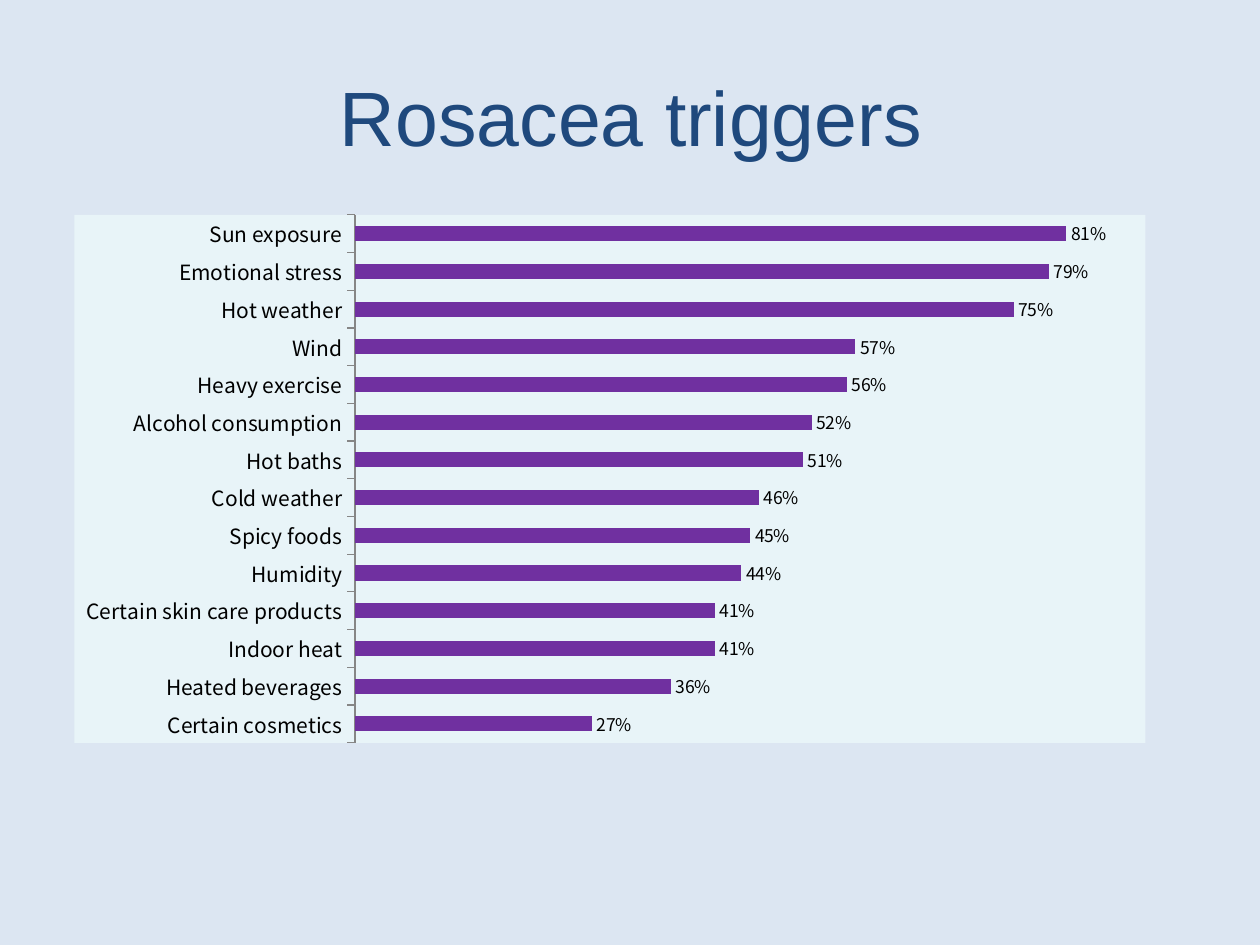
import dataclasses

import lxml.etree
import pptx
import pptx.chart.data
import pptx.dml.color
import pptx.enum.chart
import pptx.enum.text
import pptx.oxml
import pptx.oxml.ns
import pptx.util

Inches = pptx.util.Inches


@dataclasses.dataclass(frozen=True)
class Theme:
    back: str = "DCE6F2"
    title: str = "1F497D"
    panel: str = "E8F4F8"
    bar: str = "7030A0"
    ink: str = "000000"
    axis: str = "868686"
    head: str = "Arial"
    body: str = "Noto Sans CJK KR"
    big: int = 44
    mid: int = 12
    small: int = 10


THEME = Theme()

RATES = {
    "Sun exposure": 0.81,
    "Emotional stress": 0.79,
    "Hot weather": 0.75,
    "Wind": 0.57,
    "Heavy exercise": 0.56,
    "Alcohol consumption": 0.52,
    "Hot baths": 0.51,
    "Cold weather": 0.46,
    "Spicy foods": 0.45,
    "Humidity": 0.44,
    "Certain skin care products": 0.41,
    "Indoor heat": 0.41,
    "Heated beverages": 0.36,
    "Certain cosmetics": 0.27,
}


def paint(fill, tone):
    fill.solid()
    fill.fore_color.rgb = pptx.dml.color.RGBColor.from_string(tone)


def style(font, face, size, tone):
    font.name = face
    font.size = pptx.util.Pt(size)
    font.bold = False
    font.color.rgb = pptx.dml.color.RGBColor.from_string(tone)


def add_text(slide, text, box, *, face, size, tone, align):
    frame = slide.shapes.add_textbox(*map(Inches, box)).text_frame
    frame.word_wrap = True
    frame.vertical_anchor = pptx.enum.text.MSO_ANCHOR.MIDDLE
    para = frame.paragraphs[0]
    para.alignment = align
    run = para.add_run()
    run.text = text
    style(run.font, face, size, tone)


def fill_panel(chart, tone):
    space = chart.element
    props = pptx.oxml.parse_xml(
        f'<c:spPr {pptx.oxml.ns.nsdecls("c", "a")}><a:solidFill>'
        f'<a:srgbClr val="{tone}"/></a:solidFill>'
        "<a:ln><a:noFill/></a:ln></c:spPr>"
    )
    space.find(pptx.oxml.ns.qn("c:chart")).addnext(props)


def place_plot(chart, left, top, width, height):
    qn = pptx.oxml.ns.qn
    area = chart.element.find(qn("c:chart")).find(qn("c:plotArea"))
    layout = area.find(qn("c:layout"))
    if layout is None:
        layout = lxml.etree.Element(qn("c:layout"))
        area.insert(0, layout)
    manual = lxml.etree.SubElement(layout, qn("c:manualLayout"))
    rules = {
        "layoutTarget": "inner", "xMode": "edge", "yMode": "edge",
        "x": left, "y": top, "w": width, "h": height,
    }
    for name, value in rules.items():
        lxml.etree.SubElement(manual, qn(f"c:{name}"), val=str(value))


def style_axes(chart):
    marks = pptx.enum.chart.XL_TICK_MARK
    side = chart.category_axis
    side.major_tick_mark = marks.OUTSIDE
    side.has_major_gridlines = False
    paint(side.format.line.fill, THEME.axis)
    style(side.tick_labels.font, THEME.body, THEME.mid, THEME.ink)

    scale = chart.value_axis
    scale.minimum_scale = 0
    scale.maximum_scale = 0.9
    scale.has_major_gridlines = False
    scale.tick_labels.number_format = "0%"
    scale.tick_labels.number_format_is_linked = False
    scale.visible = False


def style_bars(plot):
    plot.gap_width = 150
    plot.vary_by_categories = False
    series = plot.series[0]
    paint(series.format.fill, THEME.bar)
    labels = series.data_labels
    labels.show_value = True
    labels.number_format = "0%"
    labels.number_format_is_linked = False
    labels.position = pptx.enum.chart.XL_LABEL_POSITION.OUTSIDE_END
    style(labels.font, THEME.body, THEME.small, THEME.ink)


def add_bars(slide, rates, box):
    data = pptx.chart.data.CategoryChartData(number_format="0%")
    data.categories = list(reversed(rates))
    data.add_series("Series 1", list(reversed(rates.values())))
    kind = pptx.enum.chart.XL_CHART_TYPE.BAR_CLUSTERED
    chart = slide.shapes.add_chart(kind, *map(Inches, box), data).chart
    chart.has_legend = False
    chart.has_title = False
    style(chart.font, THEME.head, THEME.mid, THEME.ink)
    style_axes(chart)
    style_bars(chart.plots[0])
    fill_panel(chart, THEME.panel)
    place_plot(chart, 0.262, 0, 0.738, 1)


def main():
    deck = pptx.Presentation()
    deck.slide_width = Inches(10)
    deck.slide_height = Inches(7.5)
    slide = deck.slides.add_slide(deck.slide_layouts[6])
    paint(slide.background.fill, THEME.back)
    add_text(
        slide, "Rosacea triggers", (0.51, 0.29, 9, 1.25),
        face=THEME.head, size=THEME.big, tone=THEME.title,
        align=pptx.enum.text.PP_ALIGN.CENTER,
    )
    add_bars(slide, RATES, (0.59, 1.7, 8.5, 4.2))
    deck.save("out.pptx")


if __name__ == "__main__":
    main()
